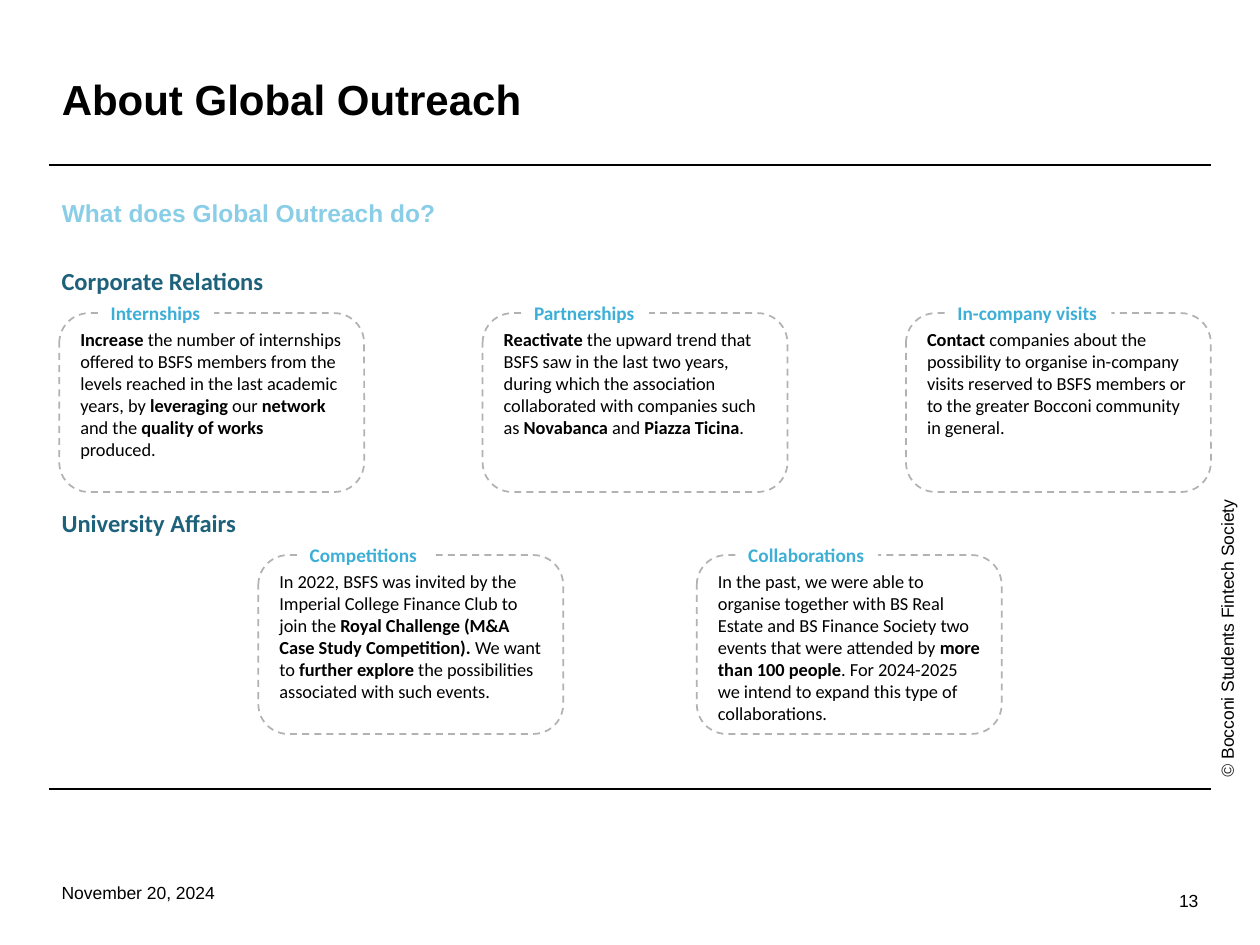
from dataclasses import dataclass

from lxml import etree
from pptx import Presentation
from pptx.dml.color import RGBColor
from pptx.enum import dml, shapes, text
from pptx.oxml import ns
from pptx.util import Inches, Pt

COLORS = {
    "black": "000000",
    "copyright": "202122",
    "white": "FFFFFF",
    "question": "89CEE6",
    "section": "1E617A",
    "tag": "3DAFD6",
    "border": "B2B2B2",
}
MARGIN, CONTENT_WIDTH = 0.39, 9.22
CARD_WIDTH, CARD_HEIGHT = 2.42, 1.42
TAG_HEIGHT = 0.29


@dataclass(frozen=True)
class Run:
    words: str
    bold: bool = False
    italic: bool = False
    color: str = "black"


@dataclass(frozen=True)
class Card:
    heading: str
    tag_width: float
    runs: tuple[Run, ...]


@dataclass(frozen=True)
class Section:
    heading: str
    heading_top: float
    first_left: float
    pitch: float
    cards: tuple[Card, ...]


SECTIONS = (
    Section("Corporate Relations", 2.11, 0.47, 3.36, (
        Card("Internships", 0.92, (
            Run("Increase", True),
            Run(" the number of internships offered to BSFS members from the "
                "levels reached in the last academic years, by "),
            Run("leveraging", True),
            Run(" our "),
            Run("network", True),
            Run(" and the "),
            Run("quality of works ", True),
            Run("produced."),
        )),
        Card("Partnerships", 1.01, (
            Run("Reactivate", True),
            Run(" the upward trend that BSFS saw in the last two years, during "
                "which the association collaborated with companies such as "),
            Run("Novabanca", True),
            Run(" and "),
            Run("Piazza Ticina", True),
            Run("."),
        )),
        Card("In-company visits", 1.32, (
            Run("Contact", True),
            Run(" companies about the possibility to organise in-company visits "
                "reserved to BSFS members or to the greater Bocconi community "
                "in general."),
        )),
    )),
    Section("University Affairs", 4.03, 2.05, 3.48, (
        Card("Competitions", 1.06, (
            Run("In 2022, BSFS was invited by the Imperial College Finance Club "
                "to join the "),
            Run("Royal Challenge (M&A Case Study Competition). ", True),
            Run("We want to "),
            Run("further explore", True),
            Run(" the possibilities associated with such events."),
        )),
        Card("Collaborations", 1.13, (
            Run("In the past, we were able to organise together with BS Real "
                "Estate and BS Finance Society two events that were attended by "),
            Run("more than 100 people", True),
            Run(". For 2024-2025 we intend to expand this type of collaborations."),
        )),
    )),
)


def rgb(name: str) -> RGBColor:
    return RGBColor.from_string(COLORS[name])


def write(shape, runs: tuple[Run, ...], size: float, font: str = "Arial",
          anchor=text.MSO_ANCHOR.TOP, align=text.PP_ALIGN.LEFT,
          wrap: bool = True):
    frame = shape.text_frame
    frame.word_wrap = wrap
    frame.auto_size = text.MSO_AUTO_SIZE.NONE
    frame.vertical_anchor = anchor
    paragraph = frame.paragraphs[0]
    paragraph.alignment = align
    for part in runs:
        run = paragraph.add_run()
        run.text = part.words
        run.font.name = font
        run.font.size = Pt(size)
        run.font.bold = part.bold
        run.font.italic = part.italic
        run.font.color.rgb = rgb(part.color)
    return paragraph


def place(shape, left: float, top: float, width: float, height: float) -> None:
    shape.left, shape.top = Inches(left), Inches(top)
    shape.width, shape.height = Inches(width), Inches(height)


def add_label(slide, left: float, top: float, width: float, height: float):
    return slide.shapes.add_textbox(
        Inches(left), Inches(top), Inches(width), Inches(height))


def add_rule(slide, top: float) -> None:
    rule = slide.shapes.add_connector(
        shapes.MSO_CONNECTOR.STRAIGHT, Inches(MARGIN), Inches(top),
        Inches(MARGIN + CONTENT_WIDTH), Inches(top))
    rule.line.color.rgb = rgb("black")
    rule.line.width = Pt(1)
    etree.SubElement(rule._element.spPr, ns.qn("a:effectLst"))


def add_panel(slide, kind, left: float, top: float, width: float, height: float):
    panel = slide.shapes.add_shape(
        kind, Inches(left), Inches(top), Inches(width), Inches(height))
    panel.shadow.inherit = False
    panel.fill.solid()
    panel.fill.fore_color.rgb = rgb("white")
    return panel


def add_card(slide, card: Card, left: float, top: float) -> None:
    body = add_panel(slide, shapes.MSO_SHAPE.ROUNDED_RECTANGLE,
                     left, top, CARD_WIDTH, CARD_HEIGHT)
    body.line.color.rgb = rgb("border")
    body.line.width = Pt(1)
    body.line.dash_style = dml.MSO_LINE.DASH
    write(body, card.runs, 10.5, "Calibri")
    tag = add_panel(slide, shapes.MSO_SHAPE.RECTANGLE,
                    left + 0.31, top - 0.14, card.tag_width, TAG_HEIGHT)
    tag.line.fill.background()
    write(tag, (Run(card.heading, True, color="tag"),), 11, "Calibri", wrap=False)


def add_section(slide, section: Section) -> None:
    heading = add_label(slide, MARGIN, section.heading_top, 1.9, 0.24)
    write(heading, (Run(section.heading, True, color="section"),), 14, "Calibri",
          text.MSO_ANCHOR.MIDDLE, wrap=False)
    for column, card in enumerate(section.cards):
        add_card(slide, card, section.first_left + column * section.pitch,
                 section.heading_top + 0.375)


def main() -> None:
    deck = Presentation()
    deck.slide_width, deck.slide_height = Inches(10), Inches(7.5)
    slide = deck.slides.add_slide(deck.slide_layouts[1])

    for rule_top in (1.31, 6.26):
        add_rule(slide, rule_top)

    title = slide.shapes.title
    place(title, MARGIN, 0.4, CONTENT_WIDTH, 0.81)
    write(title, (Run("About Global Outreach", True),), 24,
          anchor=text.MSO_ANCHOR.MIDDLE).line_spacing = 0.9

    question = slide.placeholders[1]
    place(question, MARGIN, 1.55, CONTENT_WIDTH, 0.47)
    line = write(question, (Run("What does Global Outreach do?", True,
                                color="question"),), 14)
    line.line_spacing = 0.9
    line.space_before = Pt(0)
    bullet = line._p.get_or_add_pPr()
    bullet.set("marL", "0")
    bullet.set("indent", "0")
    etree.SubElement(bullet, ns.qn("a:buNone"))

    for section in SECTIONS:
        add_section(slide, section)

    copyright_line = add_label(slide, 8.53, 4.92, 2.42, 0.27)
    copyright_line.rotation = 270
    write(copyright_line, (Run("© ", italic=True, color="copyright"),
                           Run("Bocconi Students Fintech Society")), 10, wrap=False)
    write(add_label(slide, MARGIN, 6.95, 2.25, 0.4), (Run("November 20, 2024"),), 10)
    write(add_label(slide, 7.36, 6.95, 2.25, 0.4), (Run("13"),), 10,
          anchor=text.MSO_ANCHOR.MIDDLE, align=text.PP_ALIGN.RIGHT)

    deck.save("out.pptx")


if __name__ == "__main__":
    main()
